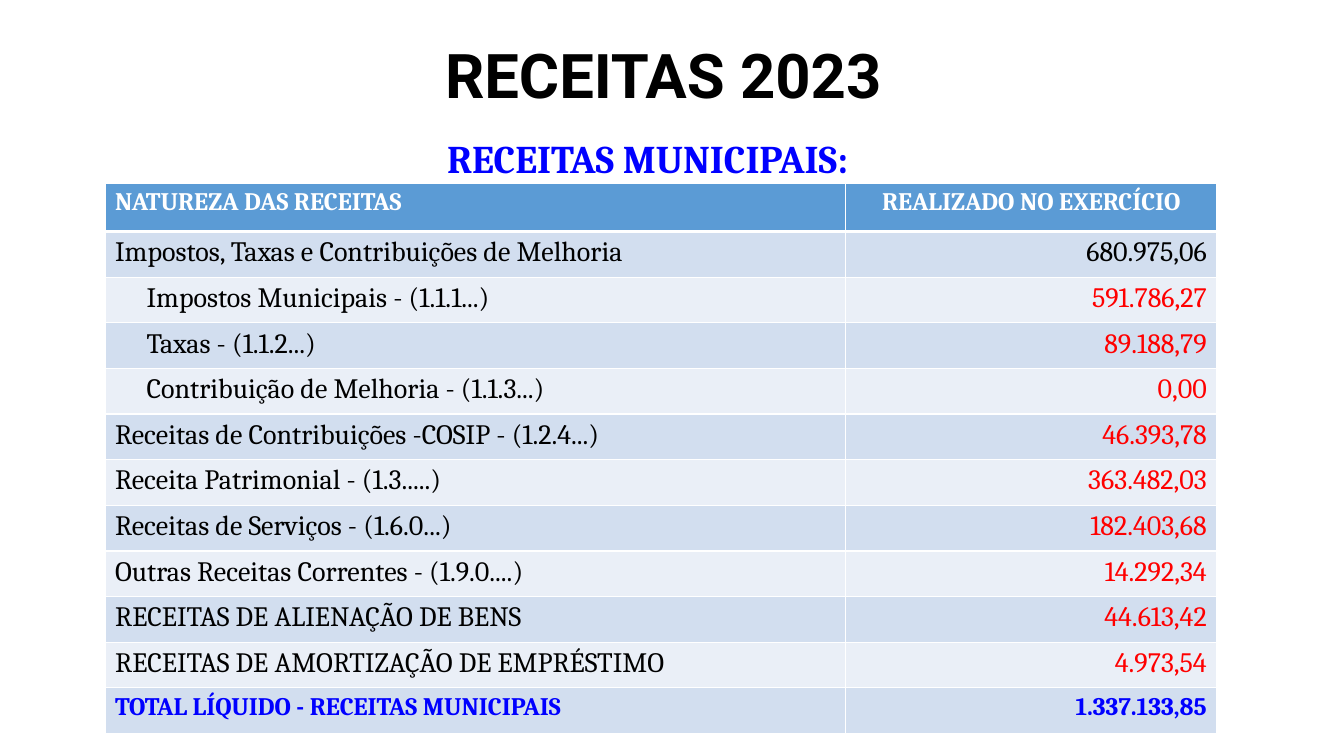
from dataclasses import dataclass

from lxml.etree import SubElement
from pptx import Presentation
from pptx.dml.color import RGBColor
from pptx.enum.text import MSO_ANCHOR, PP_ALIGN
from pptx.oxml.ns import qn
from pptx.util import Emu, Pt

PX_PER_INCH = 192
BLACK, WHITE, BLUE, RED = "000000", "FFFFFF", "0000FF", "FF0000"
HEADER_FILL, BAND_FILLS = "5B9BD5", ("D2DEEF", "EAEFF7")
COLUMN_WIDTHS = (1411, 707)
HEADER_HEIGHT, ROW_HEIGHT = 92, 87
INDENT = 60


@dataclass
class Revenue:
    name: str
    amount: str
    amount_color: str = RED
    indent: int = 0


REVENUES = [
    Revenue("Impostos, Taxas e Contribuições de Melhoria", "680.975,06", BLACK),
    Revenue("Impostos Municipais - (1.1.1...)", "591.786,27", indent=INDENT),
    Revenue("Taxas - (1.1.2...)", "89.188,79", indent=INDENT),
    Revenue("Contribuição de Melhoria - (1.1.3...)", "0,00", indent=INDENT),
    Revenue("Receitas de Contribuições -COSIP - (1.2.4...)", "46.393,78"),
    Revenue("Receita Patrimonial - (1.3.....)", "363.482,03"),
    Revenue("Receitas de Serviços - (1.6.0...)", "182.403,68"),
    Revenue("Outras Receitas Correntes - (1.9.0....)", "14.292,34"),
    Revenue("RECEITAS DE ALIENAÇÃO DE BENS", "44.613,42"),
    Revenue("RECEITAS DE AMORTIZAÇÃO DE EMPRÉSTIMO", "4.973,54"),
]


def px(n: int) -> Emu:
    return Emu(n * 914400 // PX_PER_INCH)


def rgb(color: str) -> RGBColor:
    return RGBColor.from_string(color)


def write(tf, text: str, *, size: int = 20, color: str = BLACK, bold: bool = False,
          font: str = "Cambria", align=PP_ALIGN.LEFT, indent: int = 0):
    p = tf.paragraphs[0]
    p.alignment = align
    if indent:
        p._p.get_or_add_pPr().set("marL", str(px(indent)))
    r = p.add_run()
    r.text = text
    r.font.name, r.font.size, r.font.bold = font, Pt(size), bold
    r.font.color.rgb = rgb(color)
    return p


def add_heading(s, text: str, box: tuple[int, int, int, int], *,
                anchor=MSO_ANCHOR.TOP, before: int = 0, **style) -> None:
    tf = s.shapes.add_textbox(*map(px, box)).text_frame
    tf.word_wrap = True
    tf.vertical_anchor = anchor
    p = write(tf, text, bold=True, align=PP_ALIGN.CENTER, **style)
    p.line_spacing = 0.9
    p.space_before = Pt(before)


def set_borders(cell, *, top: int = 1, bottom: int = 1) -> None:
    tcPr = cell._tc.get_or_add_tcPr()
    for side, width in (("L", 1), ("R", 1), ("T", top), ("B", bottom)):
        ln = SubElement(tcPr, qn(f"a:ln{side}"), w=str(Pt(width)))
        fill = SubElement(ln, qn("a:solidFill"))
        SubElement(fill, qn("a:srgbClr"), val=WHITE)


def fill_row(table, i: int, fill: str, left: dict, right: dict) -> None:
    for cell, content in zip(table.rows[i].cells, (left, right)):
        set_borders(cell, top=3 if i == 1 else 1, bottom=3 if i == 0 else 1)
        cell.fill.solid()
        cell.fill.fore_color.rgb = rgb(fill)
        write(cell.text_frame, **content)


def add_revenue_table(s, left: int, top: int) -> None:
    count = len(REVENUES) + 2
    height = HEADER_HEIGHT + ROW_HEIGHT * (count - 1)
    table = s.shapes.add_table(count, 2, px(left), px(top),
                               px(sum(COLUMN_WIDTHS)), px(height)).table
    for column, width in zip(table.columns, COLUMN_WIDTHS):
        column.width = px(width)
    for i, row in enumerate(table.rows):
        row.height = px(ROW_HEIGHT if i else HEADER_HEIGHT)

    # Header row
    header = dict(size=18, color=WHITE, bold=True)
    fill_row(table, 0, HEADER_FILL, dict(text="NATUREZA DAS RECEITAS", **header),
             dict(text="REALIZADO NO EXERCÍCIO", align=PP_ALIGN.CENTER, **header))

    # Revenue rows
    for i, item in enumerate(REVENUES, start=1):
        fill_row(table, i, BAND_FILLS[(i - 1) % 2],
                 dict(text=item.name, indent=item.indent),
                 dict(text=item.amount, color=item.amount_color, align=PP_ALIGN.RIGHT))

    # Total row
    total = dict(size=18, color=BLUE, bold=True)
    fill_row(table, count - 1, BAND_FILLS[count % 2],
             dict(text="TOTAL LÍQUIDO - RECEITAS MUNICIPAIS", **total),
             dict(text="1.337.133,85", align=PP_ALIGN.RIGHT, **total))


def main() -> None:
    prs = Presentation()
    prs.slide_width, prs.slide_height = px(2560), px(1440)
    s = prs.slides.add_slide(prs.slide_layouts[6])

    # Headings
    add_heading(s, "RECEITAS 2023", (160, 44, 2208, 213),
                anchor=MSO_ANCHOR.MIDDLE, size=44, font="Roboto")
    add_heading(s, "RECEITAS MUNICIPAIS:", (168, 257, 2131, 119),
                before=10, size=28, color=BLUE)

    # Table
    add_revenue_table(s, 200, 349)
    prs.save("out.pptx")


if __name__ == "__main__":
    main()
